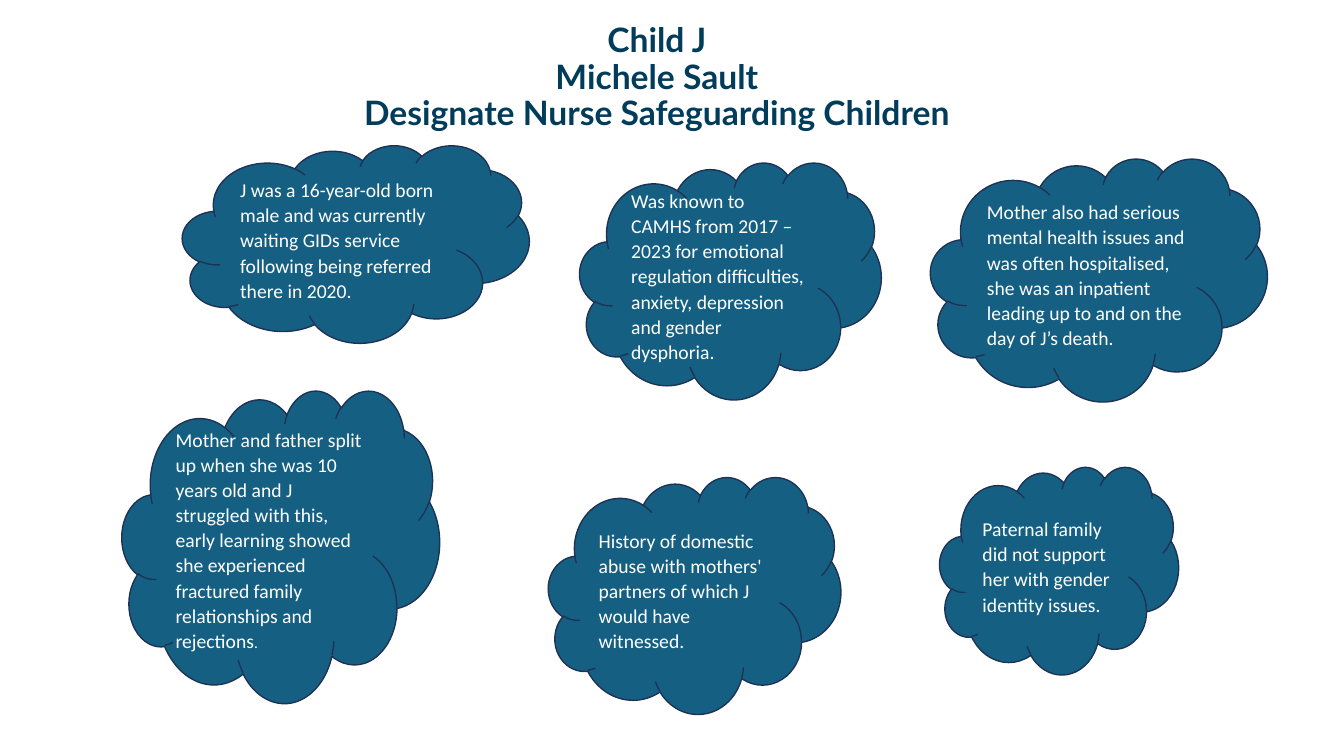
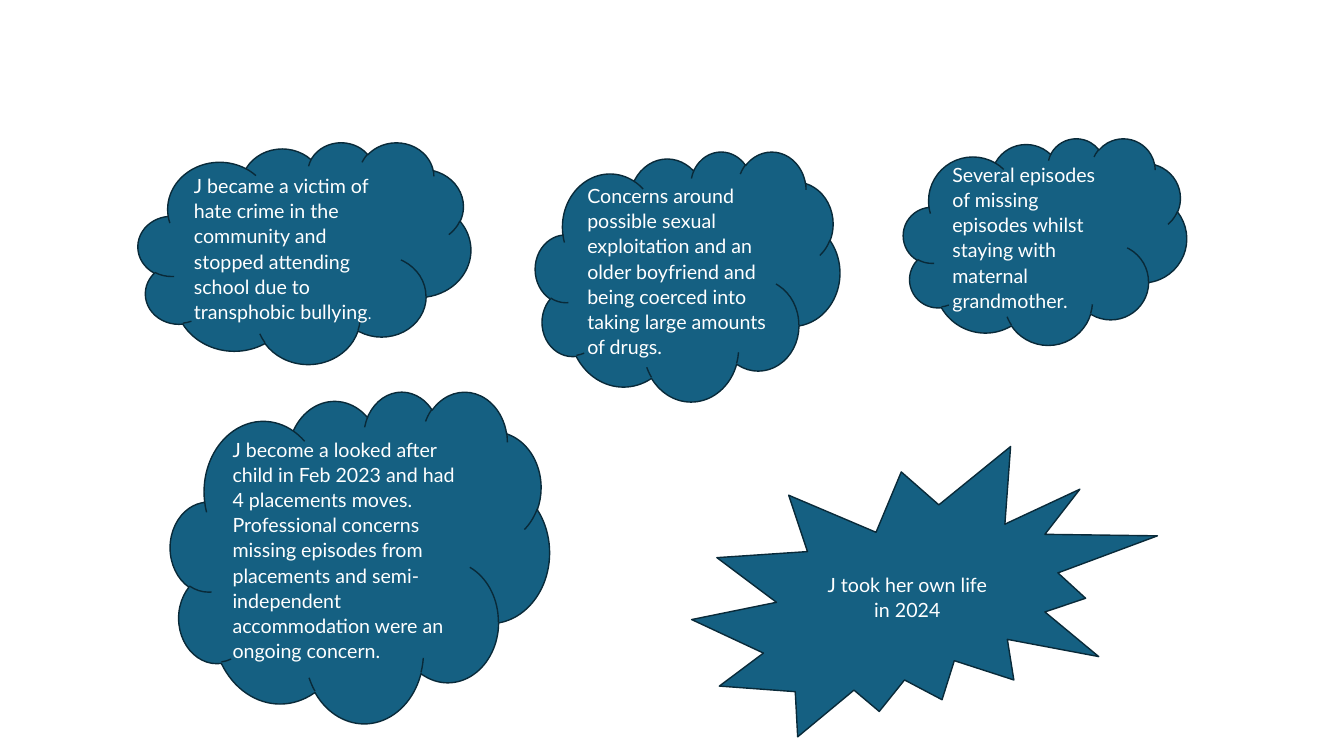
from pptx import Presentation
from pptx.dml.color import RGBColor
from pptx.enum.shapes import MSO_SHAPE as Shape
from pptx.enum.text import MSO_ANCHOR as Anchor, PP_ALIGN as Align
from pptx.util import Inches, Pt

COLOURS = {
    "title": "013C5B",
    "cloud": "156082",
    "navy": "1E3256",
    "dark": "092A39",
    "white": "FFFFFF",
}

HISTORY = [
    ((1.81, 1.44, 3.44, 1.96), "J was a 16-year-old born male and was currently waiting "
     "GIDs service following being referred there in 2020."),
    ((5.75, 1.61, 2.99, 2.35), "Was known to CAMHS from 2017 – 2023 for emotional regulation "
     "difficulties, anxiety, depression and gender dysphoria."),
    ((1.21, 3.87, 3.15, 3.1), "Mother and father split up when she was 10 years old and J "
     "struggled with this, early learning showed she experienced fractured family "
     "relationships and rejections", "."),
    ((9.23, 1.57, 3.34, 2.41), "Mother also had serious mental health issues and was often "
     "hospitalised, she was an inpatient leading up to and on the day of J’s death."),
    ((5.44, 4.73, 2.9, 2.35), "History of domestic abuse with mothers' partners of which J "
     "would have witnessed."),
    ((9.32, 4.63, 2.37, 2.06), "Paternal family did not support her with gender identity "
     "issues."),
]

EVENTS = [
    ((1.37, 1.41, 3.3, 2.2), "J became a victim of hate crime in the community and stopped "
     "attending school due to transphobic bullying", "."),
    ((5.31, 1.5, 3.02, 2.48), "Concerns around possible sexual exploitation and an older "
     "boyfriend and being coerced into taking large amounts of drugs."),
    ((8.96, 1.37, 2.81, 2.05), "Several episodes of missing episodes whilst staying with "
     "maternal grandmother."),
    ((1.69, 3.88, 3.76, 3.29), "J become a looked after child in Feb 2023 and had 4 "
     "placements moves. Professional concerns missing episodes from placements and "
     "semi-independent accommodation were an ongoing concern."),
]


class Deck:
    """Holds the shared style and the current slide."""

    def __init__(self):
        self.presentation = Presentation()
        self.presentation.slide_width = Inches(13.33)
        self.presentation.slide_height = Inches(7.5)

    def new_slide(self, font_name, outline):
        self.slide = self.presentation.slides.add_slide(self.presentation.slide_layouts[6])
        self.font_name = font_name
        self.outline = outline

    def colour(self, name):
        return RGBColor.from_string(COLOURS[name])

    def style(self, paragraph, font_name, size, colour, bold=False):
        font = paragraph.font
        font.name = font_name
        font.size = Pt(size)
        font.bold = bold
        font.color.rgb = self.colour(colour)

    def title(self, box, lines):
        shape = self.slide.shapes.add_textbox(*map(Inches, box))
        frame = shape.text_frame
        frame.word_wrap = True
        frame.vertical_anchor = Anchor.MIDDLE
        paragraph = frame.paragraphs[0]
        paragraph.text = "\v".join(lines)
        paragraph.alignment = Align.CENTER
        paragraph.line_spacing = 0.9
        self.style(paragraph, "Lato", 24, "title", bold=True)

    def bubble(self, box, text, small_end="", kind=Shape.CLOUD, alignment=Align.LEFT):
        shape = self.slide.shapes.add_shape(kind, *map(Inches, box))
        shape.shadow.inherit = False
        shape.fill.solid()
        shape.fill.fore_color.rgb = self.colour("cloud")
        shape.line.color.rgb = self.colour(self.outline)
        shape.line.width = Pt(1)
        frame = shape.text_frame
        frame.word_wrap = True
        frame.vertical_anchor = Anchor.MIDDLE
        paragraph = frame.paragraphs[0]
        paragraph.text = text
        paragraph.alignment = alignment
        paragraph.line_spacing = 1.07
        paragraph.space_after = Pt(8)
        self.style(paragraph, self.font_name, 14, "white")
        if small_end:
            run = paragraph.add_run()
            run.text = small_end
            run.font.size = Pt(11)


def main():
    deck = Deck()

    deck.new_slide("Calibri", "navy")
    deck.title((2.4, 0.2, 8.23, 1.15),
               ["Child J", "Michele Sault", "Designate Nurse Safeguarding Children"])
    for cloud in HISTORY:
        deck.bubble(*cloud)

    deck.new_slide("Lato", "dark")
    for cloud in EVENTS:
        deck.bubble(*cloud)
    deck.bubble((6.86, 4.43, 4.62, 2.88), "J took her own life in 2024",
                kind=Shape.EXPLOSION2, alignment=Align.CENTER)

    deck.presentation.save("out.pptx")


if __name__ == "__main__":
    main()
